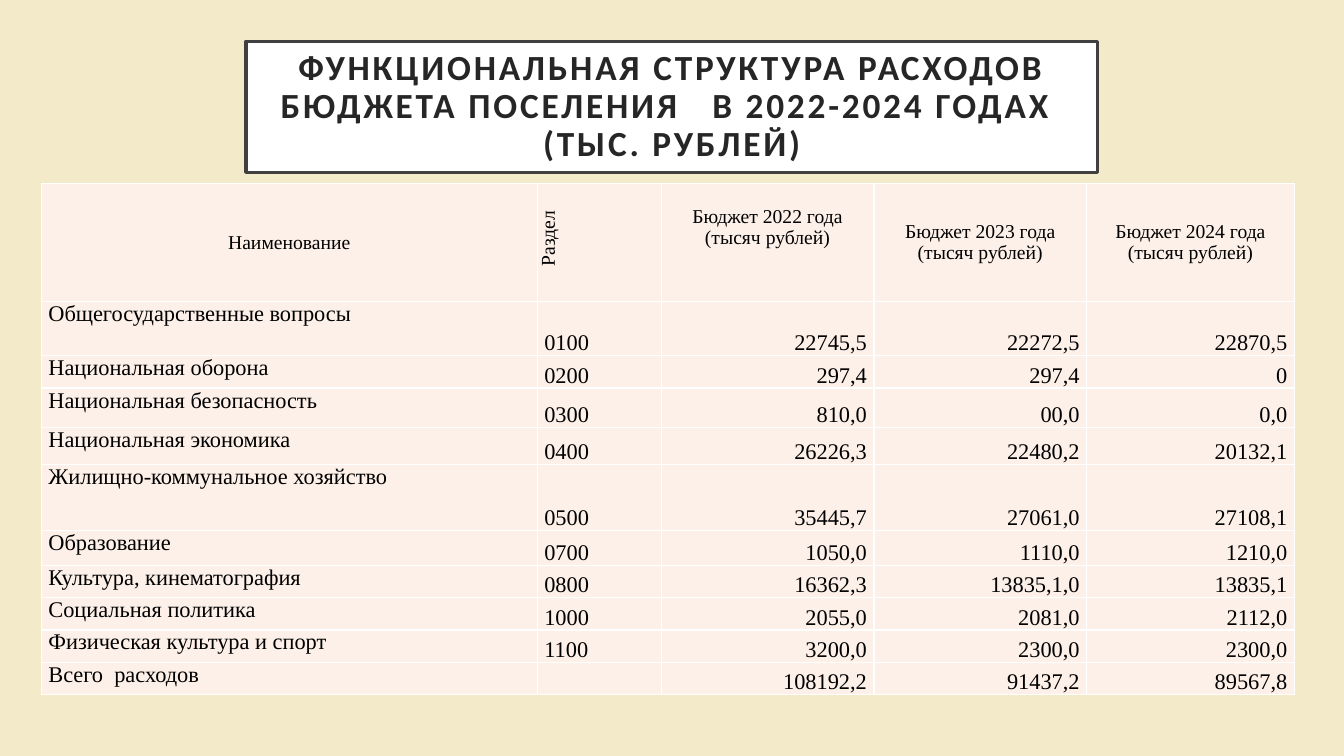
from lxml.etree import SubElement, fromstring
from pptx import Presentation
from pptx.dml.color import RGBColor
from pptx.enum.text import MSO_ANCHOR as Anchor, MSO_AUTO_SIZE as AutoSize, PP_ALIGN as Align
from pptx.oxml.ns import nsdecls, qn
from pptx.util import Inches, Pt

SLIDE_WIDTH, SLIDE_HEIGHT = Inches(13.33), Inches(7.5)
TITLE = "ФУНКЦИОНАЛЬНАЯ СТРУКТУРА РАСХОДОВ БЮДЖЕТА ПОСЕЛЕНИЯ   В 2022-2024 ГОДАХ  (ТЫС. РУБЛЕЙ)"
HEADER = ["Наименование", "Раздел"] + [
    f"Бюджет {year} года (тысяч рублей)" for year in (2022, 2023, 2024)
]
EXPENSES = [
    ("Общегосударственные вопросы", "0100", "22745,5", "22272,5", "22870,5"),
    ("Национальная оборона", "0200", "297,4", "297,4", "0"),
    ("Национальная безопасность", "0300", "810,0", "00,0", "0,0"),
    ("Национальная экономика", "0400", "26226,3", "22480,2", "20132,1"),
    ("Жилищно-коммунальное хозяйство", "0500", "35445,7", "27061,0", "27108,1"),
    ("Образование", "0700", "1050,0", "1110,0", "1210,0"),
    ("Культура, кинематография", "0800", "16362,3", "13835,1,0", "13835,1"),
    ("Социальная политика", "1000", "2055,0", "2081,0", "2112,0"),
    ("Физическая культура и спорт", "1100", "3200,0", "2300,0", "2300,0"),
    ("Всего  расходов ", "", "108192,2", "91437,2", "89567,8"),
]
COLUMN_SHARES = [36.9, 9.22, 15.83, 15.83, 15.45]
ROW_SHARES = [15.6, 7.2, 4.27, 5.2, 4.93, 8.67, 4.67] + [4.27] * 4


def across(percent):
    return int(SLIDE_WIDTH * percent / 100)


def down(percent):
    return int(SLIDE_HEIGHT * percent / 100)


def color(value):
    return RGBColor.from_string(value)


def paint(fill, value):
    fill.solid()
    fill.fore_color.rgb = color(value)


def style_text(paragraph, font_name, size, value, alignment):
    paragraph.alignment = alignment
    for run in paragraph.runs:
        run.font.name = font_name
        run.font.size = Pt(size)
        run.font.color.rgb = color(value)


def add_title(slide):
    title = slide.shapes.title
    title.left, title.top = across(18.3), down(5.47)
    title.width, title.height = across(63.38), down(17.33)
    paint(title.fill, "FFFFFF")
    title.line.color.rgb = color("404040")
    title.line.width = Pt(2.5)
    frame = title.text_frame
    frame.text = TITLE
    frame.word_wrap = True
    frame.auto_size = AutoSize.NONE
    frame.vertical_anchor = Anchor.MIDDLE
    frame.margin_left = frame.margin_right = Inches(0.2)
    frame.margin_top = frame.margin_bottom = Inches(0.2)
    paragraph = frame.paragraphs[0]
    paragraph.line_spacing = 0.9
    style_text(paragraph, "Calibri", 25.2, "262626", Align.CENTER)
    for run in paragraph.runs:
        run.font.bold = True
        run.font._element.set("spc", "200")


def add_borders(cell, value, width):
    properties = cell._tc.get_or_add_tcPr()
    for index, side in enumerate(("lnL", "lnR", "lnT", "lnB")):
        border = fromstring(f'<a:{side} {nsdecls("a")} w="{Pt(width)}"/>')
        fill = SubElement(border, qn("a:solidFill"))
        SubElement(fill, qn("a:srgbClr")).set("val", value)
        properties.insert(index, border)


def fill_cell(cell, text, size, alignment, anchor):
    cell.text_frame.text = text
    cell.vertical_anchor = anchor
    cell.margin_left = cell.margin_right = Inches(0.07)
    cell.margin_top = cell.margin_bottom = 0
    style_text(cell.text_frame.paragraphs[0], "Times New Roman", size, "000000", alignment)
    paint(cell.fill, "FDF0E8")
    add_borders(cell, "FFFFFF", 1)


def adjust_header(table):
    section, first_year = table.cell(0, 1), table.cell(0, 2)
    section._tc.get_or_add_tcPr().set("vert", "vert270")
    section.text_frame.paragraphs[0]._p.get_or_add_pPr().set("marL", str(Inches(0.08)))
    first_year.vertical_anchor = Anchor.TOP
    first_year.margin_top = Inches(0.22)


def add_expense_table(slide):
    frame = slide.shapes.add_table(
        len(ROW_SHARES), len(COLUMN_SHARES),
        across(3.08), down(24.27), across(sum(COLUMN_SHARES)), down(sum(ROW_SHARES)),
    )
    table = frame.table
    table.horz_banding = table.first_row = False
    for column, share in zip(table.columns, COLUMN_SHARES):
        column.width = across(share)
    for row, share in zip(table.rows, ROW_SHARES):
        row.height = down(share)
    for column, text in enumerate(HEADER):
        fill_cell(table.cell(0, column), text, 14, Align.CENTER, Anchor.MIDDLE)
    for row, values in enumerate(EXPENSES, start=1):
        for column, text in enumerate(values):
            alignment = Align.JUSTIFY if column < 2 else Align.RIGHT
            anchor = Anchor.BOTTOM if column else Anchor.TOP
            fill_cell(table.cell(row, column), text, 16, alignment, anchor)
    adjust_header(table)


def main():
    presentation = Presentation()
    presentation.slide_width, presentation.slide_height = SLIDE_WIDTH, SLIDE_HEIGHT
    slide = presentation.slides.add_slide(presentation.slide_layouts[5])
    paint(slide.background.fill, "F2EAC8")
    add_title(slide)
    add_expense_table(slide)
    presentation.save("out.pptx")


if __name__ == "__main__":
    main()
